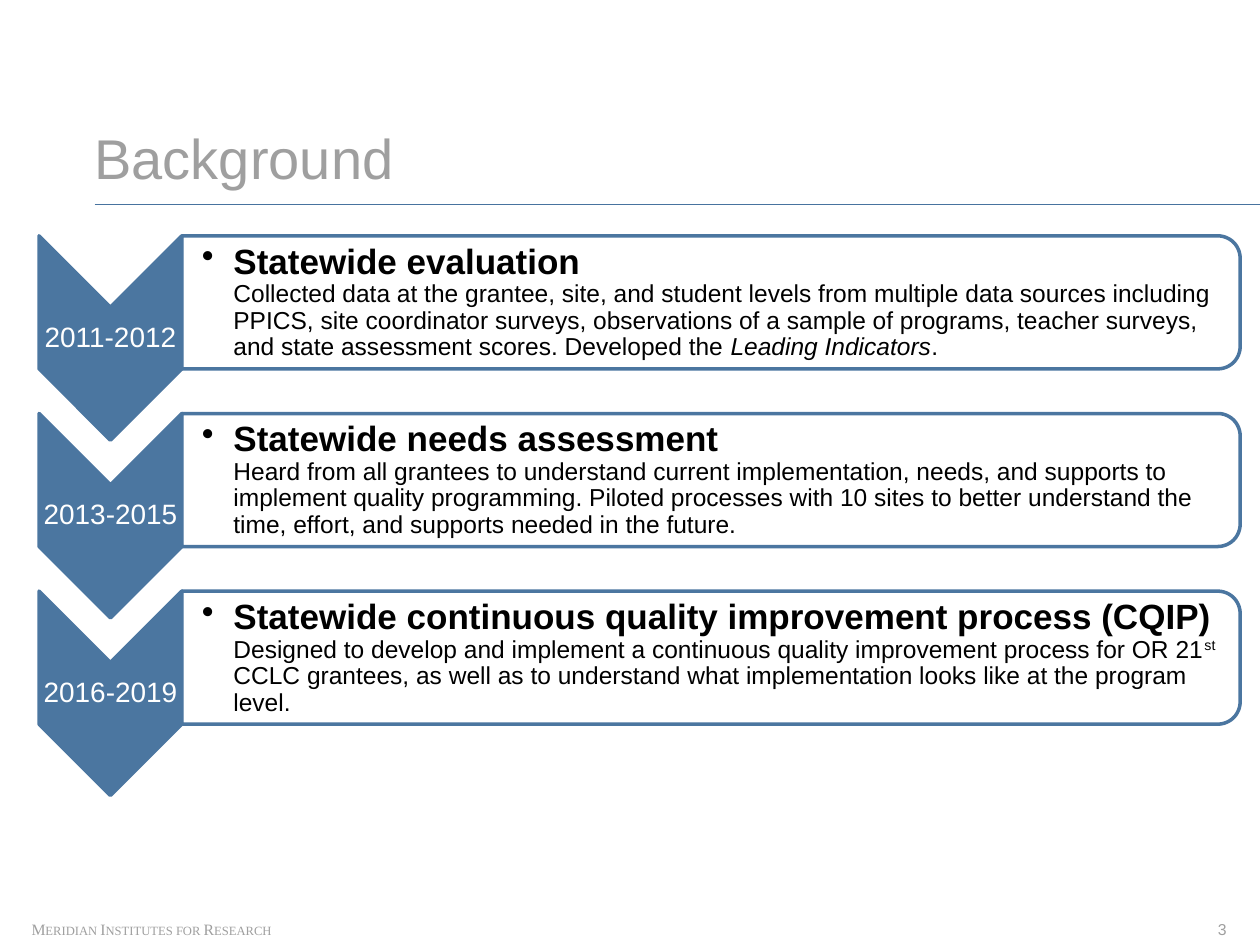
"""Build the Background slide: three dated chevrons with their boxes."""
from math import cos, pi, sin

from lxml.etree import SubElement
from pptx import Presentation
from pptx.dml.color import RGBColor
from pptx.enum.shapes import MSO_CONNECTOR
from pptx.enum.text import MSO_ANCHOR, MSO_AUTO_SIZE, PP_ALIGN
from pptx.oxml.ns import qn
from pptx.util import Pt

LINE = MSO_CONNECTOR.STRAIGHT
MIDDLE, BOTTOM = MSO_ANCHOR.MIDDLE, MSO_ANCHOR.BOTTOM
FIXED = MSO_AUTO_SIZE.NONE
LEFT, CENTER, RIGHT = PP_ALIGN.LEFT, PP_ALIGN.CENTER, PP_ALIGN.RIGHT
BLUE, GRAY, WHITE, BLACK = "4B76A0", "9F9F9F", "FFFFFF", "000000"

STEPS = [
    ("2011-2012", "Statewide evaluation", [
        ("Collected data at the grantee, site, and student levels from multiple "
         "data sources including PPICS, site coordinator surveys, observations "
         "of a sample of programs, teacher surveys, and state assessment "
         "scores. Developed the ", ""),
        ("Leading Indicators", "italic"),
        (".", "")]),
    ("2013-2015", "Statewide needs assessment", [
        ("Heard from all grantees to understand current implementation, needs, "
         "and supports to implement quality programming. Piloted processes "
         "with 10 sites to better understand the time, effort, and supports "
         "needed in the future.", "")]),
    ("2016-2019", "Statewide continuous quality improvement process (CQIP)", [
        ("Designed to develop and implement a continuous quality improvement "
         "process for OR 21", ""),
        ("st", "super"),
        (" CCLC grantees, as well as to understand what implementation looks "
         "like at the program level.", "")]),
]


def rgb(code):
    """Turn a hex string into a colour."""
    return RGBColor.from_string(code)


def style(shape, pads, anchor, align, size, color, face="Arial"):
    """Format the frame and first paragraph of a shape; return the paragraph."""
    frame = shape.text_frame
    frame.auto_size = FIXED
    frame.vertical_anchor = anchor
    (frame.margin_left, frame.margin_top,
     frame.margin_right, frame.margin_bottom) = map(Pt, pads)
    para = frame.paragraphs[0]
    para.alignment = align
    para.font.name = face
    para.font.size = Pt(size)
    para.font.color.rgb = rgb(color)
    return para


deck = Presentation()
deck.slide_width, deck.slide_height = Pt(720), Pt(540)
slide = deck.slides.add_slide(deck.slide_layouts[5])
shapes = slide.shapes

title = shapes.title
title.left, title.top, title.width, title.height = map(Pt, (54, 70, 647, 39))
title.text_frame.text = "Background"
style(title, (0, 0, 0, 0), BOTTOM, LEFT, 32, GRAY)

rule = shapes.add_connector(LINE, Pt(54), Pt(117), Pt(720), Pt(117))
rule.line.color.rgb = rgb("47739F")
rule.line.width = Pt(0.5)
SubElement(rule._element.spPr, qn("a:effectLst"))

for text, left, width, align, face in [
        ("Meridian Institutes for Research", 18, 140, LEFT, "Times New Roman"),
        ("3", 690, 11, RIGHT, "Arial")]:
    note = shapes.add_textbox(Pt(left), Pt(525.6), Pt(width), Pt(11))
    note.text_frame.text = text
    para = style(note, (0, 0, 0, 0), MIDDLE, align, 9, GRAY, face)
    if align == LEFT:
        para.runs[0]._r.get_or_add_rPr().set("cap", "small")

left, mid, right = 22.3, 103.9, 708.7
high, pitch, bend = 76, 101.5, 12.7
half = (mid - left) / 2
turns = [pi / 2 * i / 12 for i in range(13)]

for row, (years, head, parts) in enumerate(STEPS):
    top = 134.8 + row * pitch
    low = top + high
    arrow = [(left, top), (left + half, top + half), (mid, top),
             (mid, low), (left + half, low + half), (left, low)]
    panel = [(mid, top)]
    panel += [(right - bend + bend * sin(a), top + bend - bend * cos(a))
              for a in turns]
    panel += [(right - bend + bend * cos(a), low - bend + bend * sin(a))
              for a in turns]
    panel.append((mid, low))

    drawn = []
    for points, fill in [(arrow, BLUE), (panel, WHITE)]:
        spots = [(Pt(x), Pt(y)) for x, y in points]
        path = shapes.build_freeform(*spots[0])
        path.add_line_segments(spots[1:], close=True)
        shape = path.convert_to_shape()
        shape.shadow.inherit = False
        shape.fill.solid()
        shape.fill.fore_color.rgb = rgb(fill)
        shape.line.color.rgb = rgb(BLUE)
        shape.line.width = Pt(2)
        shape.text_frame.word_wrap = True
        drawn.append(shape)
    arrow, panel = drawn

    arrow.text_frame.text = years
    para = style(arrow, (0.7, 42, 0.7, 42), MIDDLE, CENTER, 16, WHITE)
    para.line_spacing = 0.9

    tint = panel._element.find(".//" + qn("a:srgbClr"))
    SubElement(tint, qn("a:alpha")).set("val", "90000")
    para = panel.text_frame.paragraphs[0]
    props = para._p.get_or_add_pPr()
    props.set("marL", str(Pt(18)))
    props.set("indent", str(Pt(-18)))
    SubElement(props, qn("a:buChar")).set("char", "•")
    style(panel, (11.5, 5, 5, 5), MIDDLE, LEFT, 14, BLACK)
    para.line_spacing = 0.9
    run = para.add_run()
    run.text = head
    run.font.size = Pt(20)
    run.font.bold = True
    para.add_line_break()
    for text, look in parts:
        run = para.add_run()
        run.text = text
        if look == "italic":
            run.font.italic = True
        elif look == "super":
            run._r.get_or_add_rPr().set("baseline", "30000")

deck.save("out.pptx")
